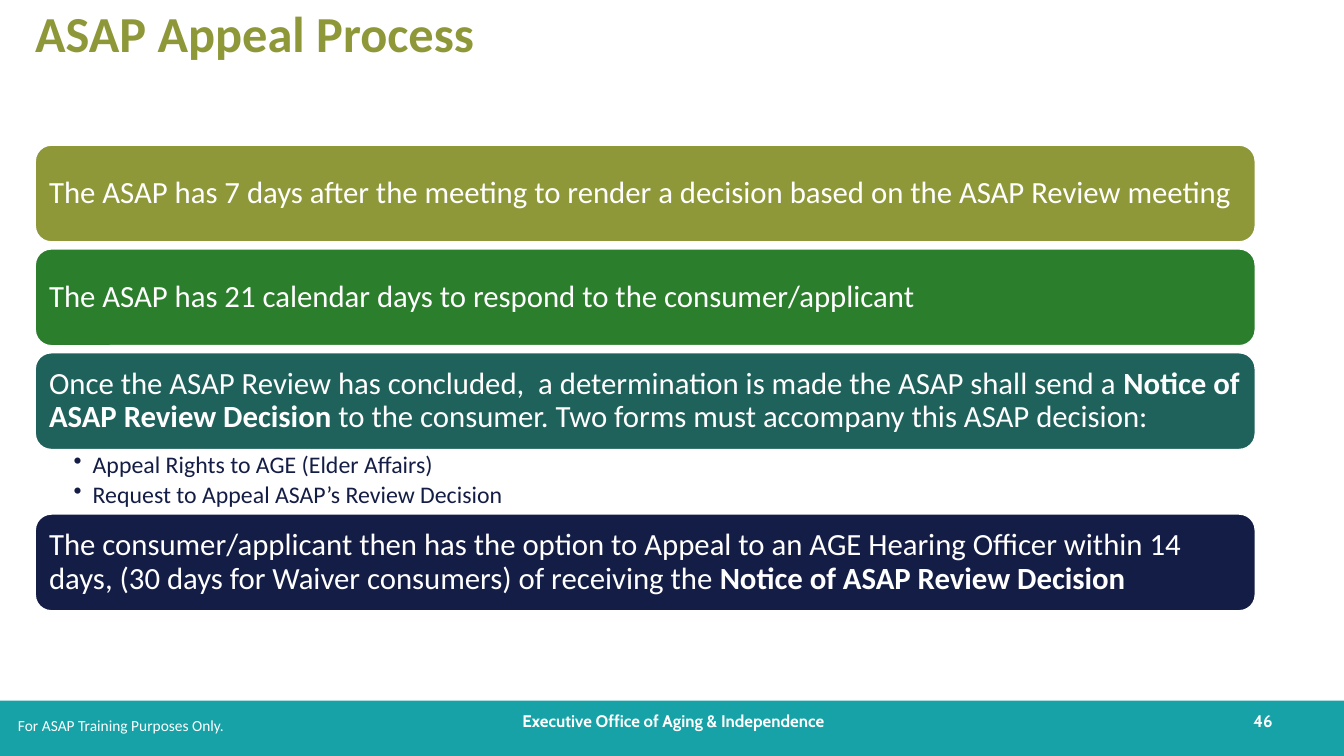
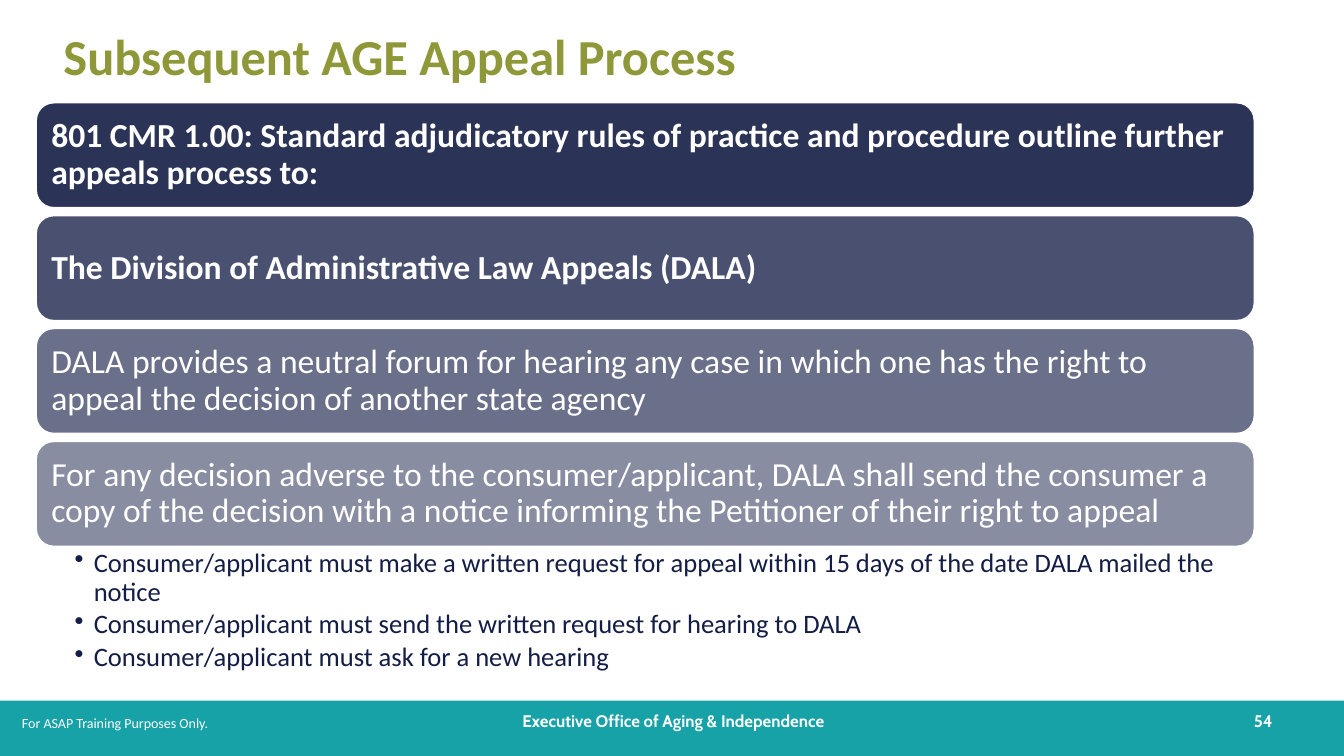
from lxml.etree import SubElement
from pptx import Presentation
from pptx.dml.color import RGBColor
from pptx.enum.shapes import MSO_SHAPE as Shape
from pptx.enum.text import MSO_ANCHOR as Anchor, PP_ALIGN as Align
from pptx.oxml.ns import qn
from pptx.util import Inches, Pt

NAVY, TEAL, OLIVE, WHITE = "141D45", "16A2A7", "8E9838", "FFFFFF"
BODY, FOOTER = "Calibri", "Cabin"

slides = [
    {
        "title": "ASAP Appeal Process", "title_at": (0.35, 0.14), "title_spacing": 0.9,
        "number": "46", "note_at": (0.08, 7.06, 6.67, 0.29), "note_size": 11,
        "left": 0.35, "top": 1.44, "width": 12.1, "height": 0.96, "gap": 0.07,
        "inset": 0.09, "size": 22, "bullet_size": 17, "bullet_height": 0.64,
        "boxes": [
            ("8F9838", 100, [("The ASAP has 7 days after the meeting to render a decision based on the ASAP Review meeting", False)], []),
            ("2B7E2B", 100, [("The ASAP has 21 calendar days to respond to the consumer/applicant", False)], []),
            ("1F625C", 100, [
                ("Once the ASAP Review has concluded,  a determination is made the ASAP shall send a ", False),
                ("Notice of ASAP Review Decision ", True),
                ("to the consumer. Two forms must accompany this ASAP decision:", False),
            ], ["Appeal Rights to AGE (Elder Affairs)", "Request to Appeal ASAP’s Review Decision"]),
            (NAVY, 100, [
                ("The consumer/applicant then has the option to Appeal to an AGE Hearing Officer within 14 days, "
                 "(30 days for Waiver consumers) of receiving the ", False),
                ("Notice of ASAP Review Decision", True),
            ], []),
        ],
    },
    {
        "title": "Subsequent AGE Appeal Process", "title_at": (0.63, 0.33), "title_spacing": 1.0,
        "number": "54", "note_at": (0.12, 7.04, 3.67, 0.27), "note_size": 10,
        "left": 0.36, "top": 1.02, "width": 12.08, "height": 1.04, "gap": 0.08,
        "inset": 0.1, "size": 24, "bullet_size": 19, "bullet_height": 1.36,
        "boxes": [
            (NAVY, 90, [("801 CMR 1.00: Standard adjudicatory rules of practice and procedure outline further appeals process to:", True)], []),
            (NAVY, 77, [("The Division of Administrative Law Appeals (DALA)", True)], []),
            (NAVY, 63, [("DALA provides a neutral forum for hearing any case in which one has the right to "
                         "appeal the decision of another state agency", False)], []),
            (NAVY, 50, [("For any decision adverse to the consumer/applicant, DALA shall send the consumer a "
                         "copy of the decision with a notice informing the Petitioner of their right to appeal", False)], [
                "Consumer/applicant must make a written request for appeal within 15 days of the date DALA mailed the notice",
                "Consumer/applicant must send the written request for hearing to DALA",
                "Consumer/applicant must ask for a new hearing",
            ]),
        ],
    },
]


def color(value):
    return RGBColor.from_string(value)


def write(shape, paragraphs, size, text_color=WHITE, font=BODY, bold=None, align=Align.LEFT,
          anchor=Anchor.MIDDLE, insets=(0.1, 0.05, 0.1, 0.05), spacing=1.0, bullet=False):
    frame = shape.text_frame
    frame.word_wrap = True
    frame.vertical_anchor = anchor
    frame.margin_left, frame.margin_top, frame.margin_right, frame.margin_bottom = map(Inches, insets)
    for index, runs in enumerate(paragraphs):
        paragraph = frame.add_paragraph() if index else frame.paragraphs[0]
        if bullet:
            paragraph.level = 1
            properties = paragraph._p.get_or_add_pPr()
            properties.set("marL", str(Inches(0.19)))
            properties.set("indent", str(-Inches(0.19)))
            SubElement(properties, qn("a:buChar")).set("char", "•")
            paragraph.space_after = Pt(3)
        paragraph.alignment = align
        paragraph.line_spacing = spacing
        paragraph.font.name = font
        paragraph.font.size = Pt(size)
        paragraph.font.bold = bold
        paragraph.font.color.rgb = color(text_color)
        for text, strong in runs:
            run = paragraph.add_run()
            run.text = text
            if strong:
                run.font.bold = True


presentation = Presentation()
presentation.slide_width, presentation.slide_height = Inches(13.33), Inches(7.5)

for content in slides:
    slide = presentation.slides.add_slide(presentation.slide_layouts[6])
    shapes = slide.shapes

    band = shapes.add_shape(Shape.RECTANGLE, 0, Inches(6.95), Inches(13.33), Inches(0.55))
    band.shadow.inherit = False
    band.fill.solid()
    band.fill.fore_color.rgb = color(TEAL)
    band.line.fill.background()

    for left, width, text, align in [
        (4.43, 4.5, "Executive Office of Aging & Independence", Align.CENTER),
        (12.21, 0.51, content["number"], Align.RIGHT),
    ]:
        footer = shapes.add_textbox(Inches(left), Inches(6.95), Inches(width), Inches(0.4))
        write(footer, [[(text, False)]], 12, font=FOOTER, bold=True, align=align)

    left, top = content["title_at"]
    title = shapes.add_textbox(Inches(left), Inches(top), Inches(12.1), Inches(0.44))
    write(title, [[(content["title"], False)]], 36, OLIVE, bold=True, insets=(0, 0, 0, 0),
          spacing=content["title_spacing"])

    left, top = Inches(content["left"]), content["top"]
    width, height = Inches(content["width"]), content["height"]
    for fill, opacity, runs, bullets in content["boxes"]:
        box = shapes.add_shape(Shape.ROUNDED_RECTANGLE, left, Inches(top), width, Inches(height))
        box.shadow.inherit = False
        box.fill.solid()
        box.fill.fore_color.rgb = color(fill)
        if opacity < 100:
            fill_color = box._element.spPr.find(qn("a:solidFill")).find(qn("a:srgbClr"))
            SubElement(fill_color, qn("a:alpha")).set("val", str(opacity * 1000))
        box.line.color.rgb = color(WHITE)
        box.line.width = Pt(1)
        write(box, [runs], content["size"], insets=(content["inset"],) * 4, spacing=0.9)
        top += height
        if bullets:
            details = shapes.add_textbox(left, Inches(top), width, Inches(content["bullet_height"]))
            write(details, [[(text, False)] for text in bullets], content["bullet_size"], NAVY,
                  anchor=Anchor.TOP, insets=(0.38, 0.03, 0.18, 0.03), spacing=0.9, bullet=True)
            top += content["bullet_height"]
        else:
            top += content["gap"]

    note = shapes.add_textbox(*map(Inches, content["note_at"]))
    write(note, [[("For ASAP Training Purposes Only.", False)]], content["note_size"], anchor=Anchor.TOP)

presentation.save("out.pptx")
